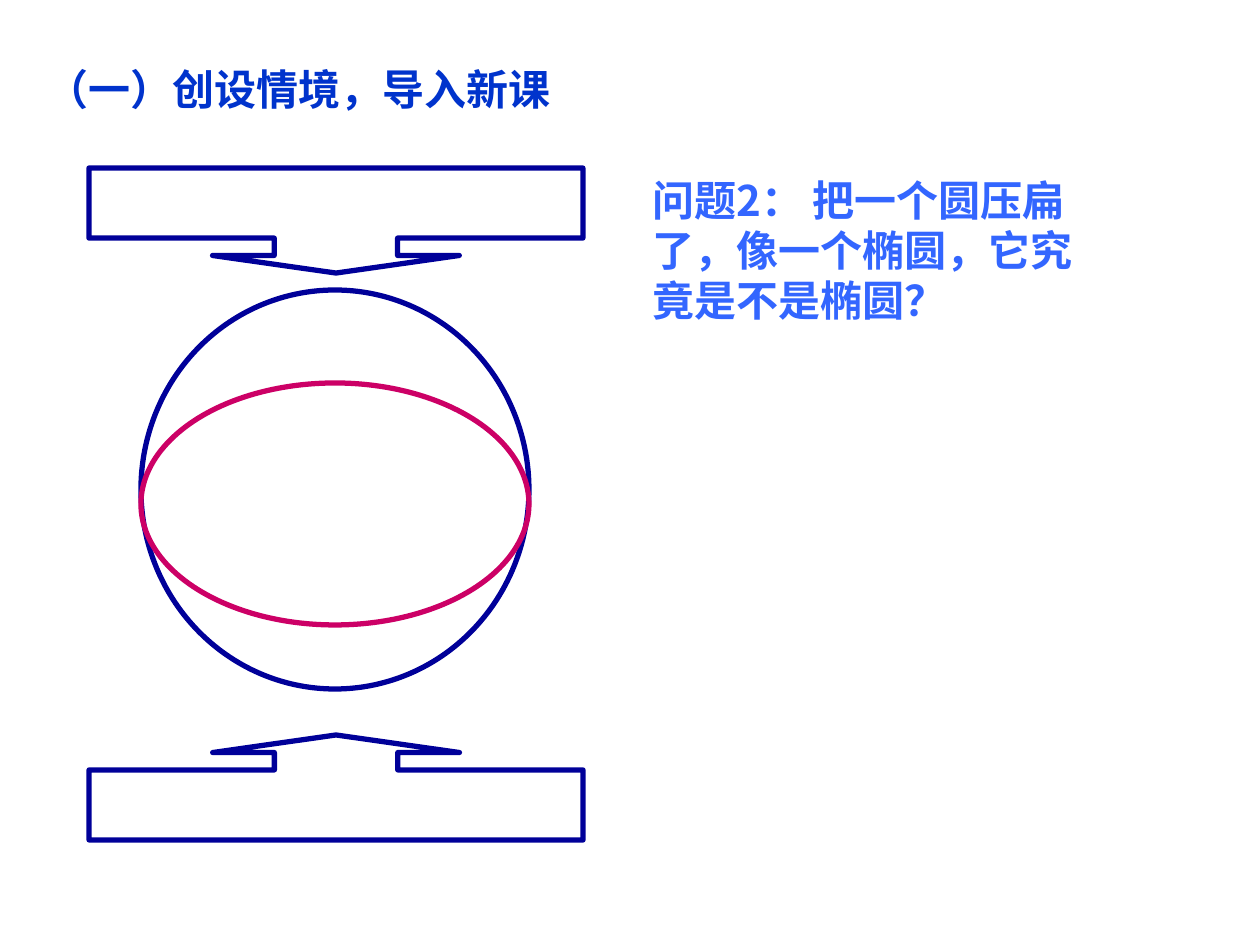
from typing import NamedTuple

from lxml import etree
from pptx import Presentation
from pptx import util as u
from pptx.dml.color import RGBColor
from pptx.enum import shapes, text
from pptx.oxml import ns

PX = 914400 / 126
FACE = "Noto Sans CJK SC"
HUES = {"navy": "000099", "rose": "CC0066", "title": "0033CC", "ask": "3366FF"}
KIND = shapes.MSO_SHAPE
SIDE = text.PP_ALIGN


class Box(NamedTuple):
    left: int
    top: int
    width: int
    height: int


class Form(NamedTuple):
    kind: shapes.MSO_SHAPE
    box: Box
    hue: str
    turn: int = 0
    bends: tuple = ()


class Note(NamedTuple):
    words: str
    box: Box
    hue: str
    side: text.PP_ALIGN


BENDS = (1.175, 1.175, 0.167, 0.667)
PRESS = [
    Form(KIND.DOWN_ARROW_CALLOUT, Box(89, top, 494, 105), "navy", turn, BENDS)
    for top, turn in ((168, 0), (735, 180))
]
OVALS = [
    Form(KIND.OVAL, Box(141, 290, 388, 399), "navy"),
    Form(KIND.OVAL, Box(141, 383, 388, 242), "rose"),
]
NOTES = [
    Note("问题2： 把一个圆压扁了，像一个椭圆，它究竟是不是椭圆？",
         Box(640, 168, 464, 165), "ask", SIDE.LEFT),
    Note("（一）创设情境，导入新课", Box(32, 57, 533, 63), "title", SIDE.CENTER),
]


def emu(box: Box) -> list[int]:
    return [round(n * PX) for n in box]


def color(hue: str) -> RGBColor:
    return RGBColor.from_string(HUES[hue])


def draw(tree, form: Form) -> None:
    shape = tree.add_shape(form.kind, *emu(form.box))
    shape.shadow.inherit = False
    shape.fill.background()
    shape.line.color.rgb = color(form.hue)
    shape.line.width = u.Pt(3)
    shape.rotation = form.turn
    for i, bend in enumerate(form.bends):
        shape.adjustments[i] = bend


def write(tree, note: Note) -> None:
    frame = tree.add_textbox(*emu(note.box)).text_frame
    frame.word_wrap = True
    frame.auto_size = text.MSO_AUTO_SIZE.SHAPE_TO_FIT_TEXT
    para = frame.paragraphs[0]
    para.alignment = note.side
    run = para.add_run()
    run.text = note.words
    for key, val in {"size": u.Pt(24), "bold": True, "name": FACE}.items():
        setattr(run.font, key, val)
    run.font.color.rgb = color(note.hue)
    props = run._r.get_or_add_rPr()
    etree.SubElement(props, ns.qn("a:ea")).set("typeface", FACE)


def main() -> None:
    deck = Presentation()
    deck.slide_width, deck.slide_height = u.Inches(10), u.Inches(7.5)
    tree = deck.slides.add_slide(deck.slide_layouts[6]).shapes
    ask, title = NOTES
    write(tree, ask)
    group = tree.add_group_shape()
    for form in PRESS:
        draw(group.shapes, form)
    for form in OVALS:
        draw(tree, form)
    write(tree, title)
    deck.save("out.pptx")


if __name__ == "__main__":
    main()
